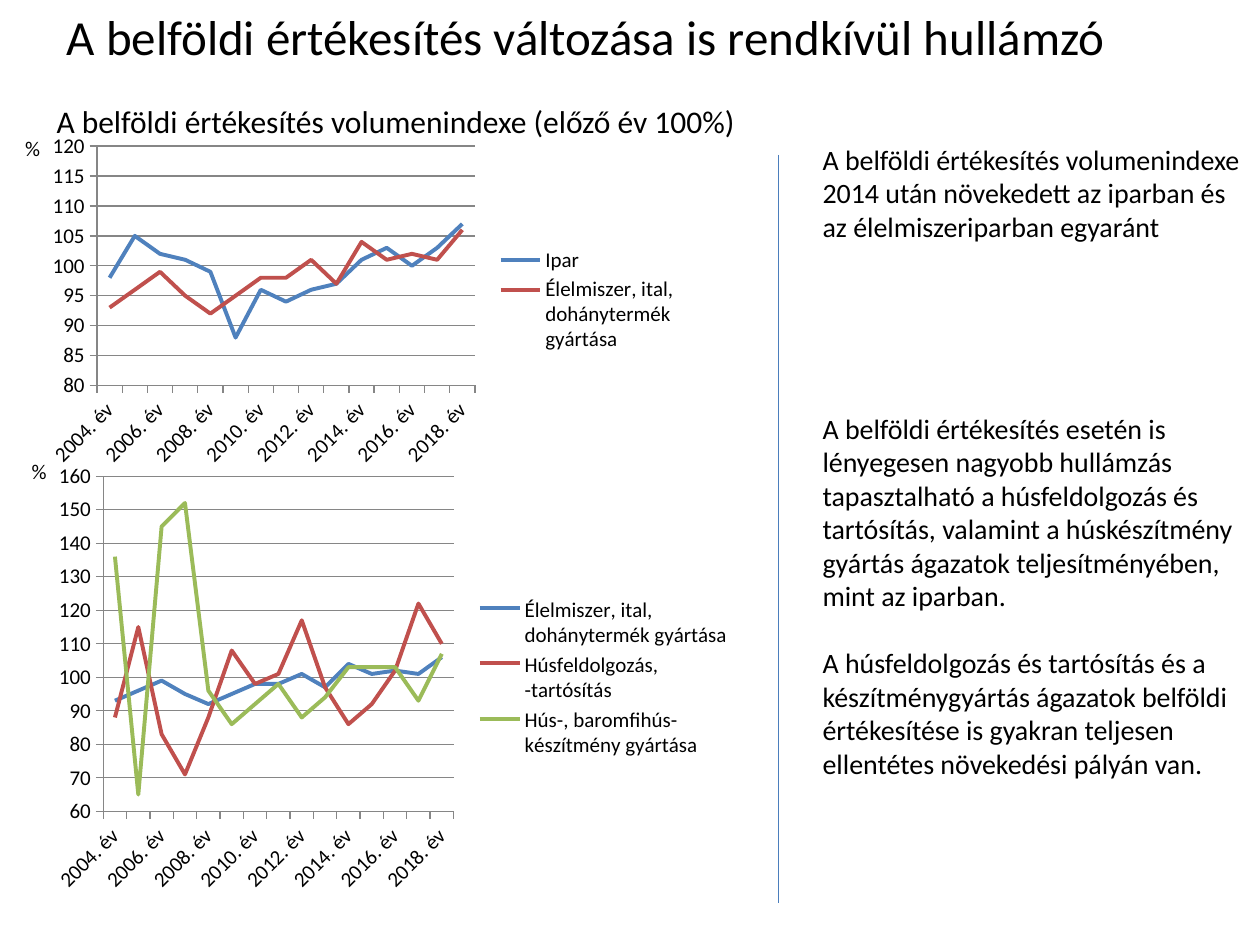
from lxml import etree
from pptx import Presentation
from pptx.chart.data import CategoryChartData
from pptx.dml.color import RGBColor
from pptx.enum.chart import XL_CHART_TYPE, XL_LEGEND_POSITION, XL_TICK_MARK
from pptx.enum.shapes import MSO_CONNECTOR
from pptx.enum.text import MSO_ANCHOR, PP_ALIGN
from pptx.oxml import parse_xml
from pptx.oxml.ns import nsdecls, qn
from pptx.util import Inches, Pt

BLACK = RGBColor(0x00, 0x00, 0x00)
BLUE = RGBColor(0x4F, 0x81, 0xBD)
RED = RGBColor(0xC0, 0x50, 0x4D)
GREEN = RGBColor(0x9B, 0xBB, 0x59)
DIVIDER = RGBColor(0x4B, 0x7E, 0xBC)
GRID = RGBColor(0x86, 0x86, 0x86)
FONT = "Calibri"

YEARS = [f"{year}. év" for year in range(2004, 2019)]
FOOD = ("Élelmiszer, ital, dohánytermék gyártása",
        (93, 96, 99, 95, 92, 95, 98, 98, 101, 97, 104, 101, 102, 101, 106))
INDUSTRY = ("Ipar", (98, 105, 102, 101, 99, 88, 96, 94, 96, 97, 101, 103, 100, 103, 107))
MEAT = ("Húsfeldolgozás, -tartósítás",
        (88, 115, 83, 71, 88, 108, 98, 101, 117, 97, 86, 92, 102, 122, 110))
MEAT_PRODUCTS = ("Hús-, baromfihús-készítmény gyártása",
                 (136, 65, 145, 152, 96, 86, 92, 98, 88, 94, 103, 103, 103, 93, 107))

COMMENTARY = [
    ("A belföldi értékesítés volumenindexe 2014 után növekedett az iparban "
     "és az élelmiszeriparban egyaránt", 0),
    ("A belföldi értékesítés esetén is lényegesen nagyobb hullámzás tapasztalható "
     "a húsfeldolgozás és tartósítás, valamint a húskészítmény gyártás ágazatok "
     "teljesítményében, mint az iparban.", 96),
    ("A húsfeldolgozás és tartósítás és a készítménygyártás ágazatok belföldi "
     "értékesítése is gyakran teljesen ellentétes növekedési pályán van.", 19),
]


def style_font(font, size):
    font.name = FONT
    font.size = Pt(size)
    font.color.rgb = BLACK


def add_title(slide, box, wording):
    title = slide.shapes.title
    title.left, title.top, title.width, title.height = map(Inches, box)
    frame = title.text_frame
    frame.text = wording
    frame.vertical_anchor = MSO_ANCHOR.MIDDLE
    frame.paragraphs[0].alignment = PP_ALIGN.LEFT
    style_font(frame.paragraphs[0].font, 28)


def add_text(slide, box, entries, size, side_margin=0.1, wrap=True):
    frame = slide.shapes.add_textbox(*map(Inches, box)).text_frame
    frame.word_wrap = wrap
    frame.margin_left = frame.margin_right = Inches(side_margin)
    for index, (wording, gap) in enumerate(entries):
        paragraph = frame.add_paragraph() if index else frame.paragraphs[0]
        paragraph.text = wording
        paragraph.space_before = Pt(gap)
        style_font(paragraph.font, size)


def add_divider(slide, x, top, bottom):
    divider = slide.shapes.add_connector(
        MSO_CONNECTOR.STRAIGHT, Inches(x), Inches(top), Inches(x), Inches(bottom))
    divider.line.color.rgb = DIVIDER
    divider.line.width = Pt(0.75)
    etree.SubElement(divider._element.spPr, qn("a:effectLst"))


def manual_layout(box, area, inner=False):
    left, top, width, height = box
    x, y, w, h = area
    target = '<c:layoutTarget val="inner"/>' if inner else ""
    return parse_xml(
        f'<c:layout {nsdecls("c")}><c:manualLayout>{target}'
        '<c:xMode val="edge"/><c:yMode val="edge"/>'
        f'<c:x val="{(x - left) / width:.4f}"/><c:y val="{(y - top) / height:.4f}"/>'
        f'<c:w val="{w / width:.4f}"/><c:h val="{h / height:.4f}"/>'
        '</c:manualLayout></c:layout>')


def style_axis(axis):
    axis.major_tick_mark = XL_TICK_MARK.OUTSIDE
    axis.minor_tick_mark = XL_TICK_MARK.NONE
    axis.format.line.color.rgb = GRID
    style_font(axis.tick_labels.font, 12)


def add_index_chart(slide, box, plot_area, legend_area, scale, series):
    data = CategoryChartData()
    data.categories = YEARS
    for name, values in series:
        data.add_series(name, values)
    chart = slide.shapes.add_chart(XL_CHART_TYPE.LINE, *map(Inches, box), data).chart
    style_font(chart.font, 18)
    chart.has_title = False

    low, high, step = scale
    values_axis, years_axis = chart.value_axis, chart.category_axis
    style_axis(values_axis)
    style_axis(years_axis)
    values_axis.minimum_scale = low
    values_axis.maximum_scale = high
    values_axis.major_unit = step
    values_axis.has_major_gridlines = True
    values_axis.major_gridlines.format.line.color.rgb = GRID
    years = years_axis._element
    years.find(qn("c:txPr")).find(qn("a:bodyPr")).set("rot", "-2700000")
    years.find(qn("c:noMultiLvlLbl")).addprevious(
        parse_xml(f'<c:tickLblSkip {nsdecls("c")} val="2"/>'))

    for line, color in zip(chart.plots[0].series, (BLUE, RED, GREEN)):
        line.smooth = False
        line.format.line.color.rgb = color
        line.format.line.width = Pt(2.25)

    chart.has_legend = True
    chart.legend.position = XL_LEGEND_POSITION.RIGHT
    chart.legend.include_in_layout = False
    style_font(chart.legend.font, 12)
    legend = chart.legend._element
    plot = chart._chartSpace.chart.plotArea
    for parent in (legend, plot):
        for old in parent.findall(qn("c:layout")):
            parent.remove(old)
    legend.find(qn("c:legendPos")).addnext(manual_layout(box, legend_area))
    plot.insert(0, manual_layout(box, plot_area, inner=True))
    chart._chartSpace.chart.addnext(parse_xml(
        f'<c:spPr {nsdecls("c", "a")}><a:noFill/><a:ln><a:noFill/></a:ln></c:spPr>'))


def main():
    deck = Presentation()
    deck.slide_width, deck.slide_height = Inches(10), Inches(7.5)
    slide = deck.slides.add_slide(deck.slide_layouts[5])
    add_title(slide, (0.43, 0.05, 9.51, 0.47),
              "A belföldi értékesítés változása is rendkívül hullámzó")
    add_text(slide, (6.43, 1.08, 3.52, 5.49), COMMENTARY, 16)
    add_divider(slide, 6.18, 1.23, 7.17)
    add_index_chart(slide, (0.28, 1, 5.16, 2.76), (0.77, 1.16, 3, 1.9),
                    (3.88, 1.93, 1.56, 0.9), (80, 120, 5), (INDUSTRY, FOOD))
    add_index_chart(slide, (0.31, 3.61, 5.55, 3.55), (0.82, 3.78, 2.78, 2.66),
                    (3.72, 4.7, 2.14, 1.36), (60, 160, 10), (FOOD, MEAT, MEAT_PRODUCTS))
    for left, top in ((0.15, 1.03), (0.2, 3.59)):
        add_text(slide, (left, top, 0.25, 0.3), [("%", 0)], 12, side_margin=0.05)
    add_text(slide, (0.35, 0.76, 6.08, 0.4),
             [("A belföldi értékesítés volumenindexe (előző év 100%)", 0)], 18)
    deck.save("out.pptx")


if __name__ == "__main__":
    main()
